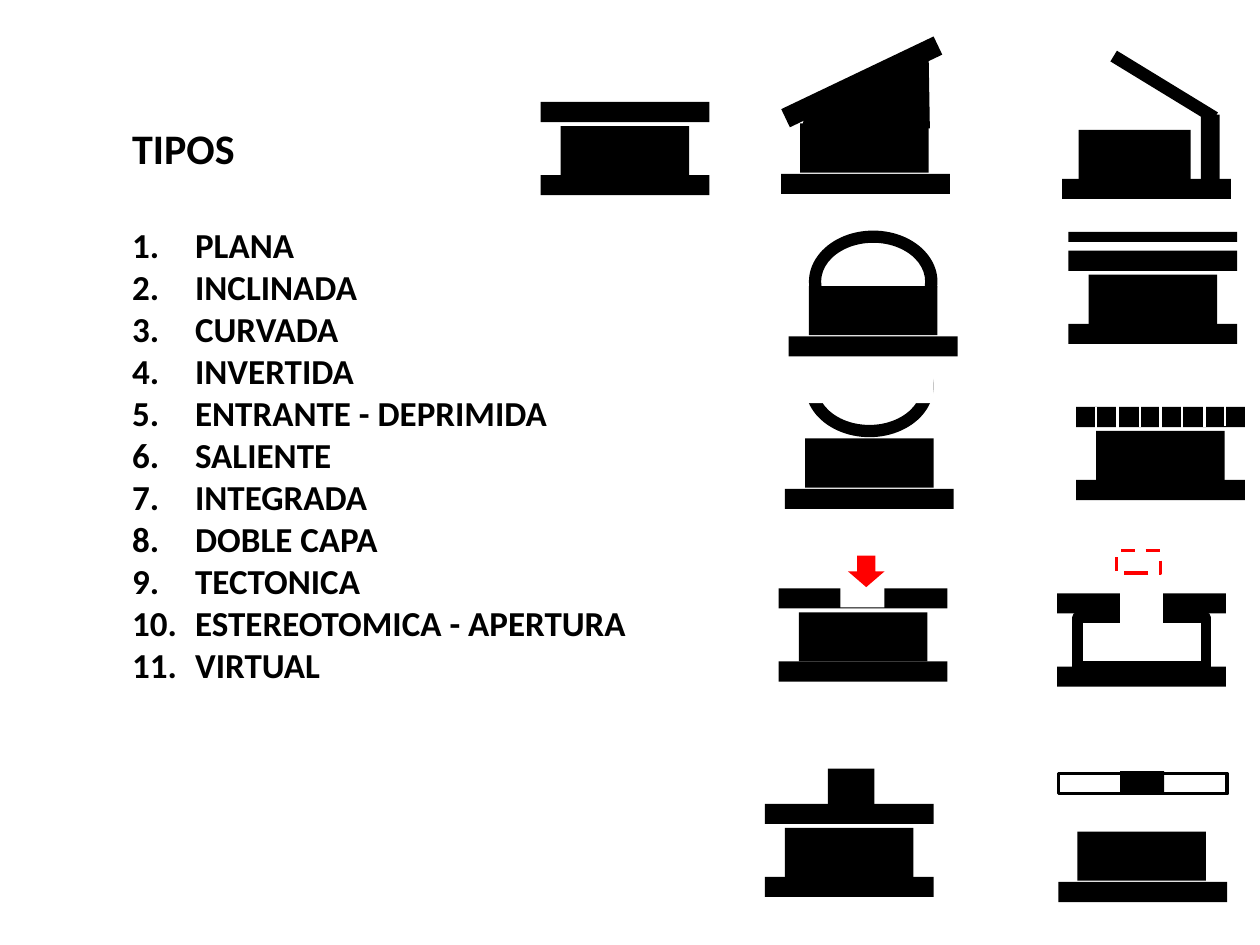
from dataclasses import dataclass
from typing import Optional

from lxml.etree import SubElement
from pptx import Presentation
from pptx.dml.color import RGBColor
from pptx.enum.dml import MSO_LINE
from pptx.enum.shapes import MSO_CONNECTOR, MSO_SHAPE as Preset
from pptx.oxml.ns import qn
from pptx.util import Pt

PX = 9144
BLACK, WHITE, RED = "000000", "FFFFFF", "FF0000"
TITLE = "TIPOS"
ROOF_TYPES = (
    "PLANA", "INCLINADA", "CURVADA", "INVERTIDA", "ENTRANTE - DEPRIMIDA",
    "SALIENTE", "INTEGRADA", "DOBLE CAPA", "TECTONICA",
    "ESTEREOTOMICA - APERTURA", "VIRTUAL",
)


@dataclass(frozen=True)
class Part:
    left: int
    top: int
    width: int
    height: int
    fill: str = BLACK
    preset: Preset = Preset.RECTANGLE
    outline: Optional[str] = None
    weight: float = 0
    dashed: bool = False
    rotation: float = 0
    adjustment: Optional[float] = None


@dataclass(frozen=True)
class Outline:
    points: tuple[tuple[int, int], ...]


@dataclass(frozen=True)
class Joint:
    left: int
    top: int
    height: int


def color(value: str) -> RGBColor:
    return RGBColor.from_string(value)


def body(left: int, top: int, **style) -> Part:
    return Part(left, top, 102, 39, **style)


def slab(left: int, top: int, **style) -> Part:
    return Part(left, top, 134, 16, **style)


def ring(left: int, top: int) -> Part:
    return Part(left, top, 102, 81, preset=Preset.DONUT, adjustment=0.12)


def house(left: int, top: int, **body_style) -> list:
    return [body(left + 16, top + 19, **body_style),
            slab(left, top), slab(left, top + 58)]


def joints() -> list:
    return [Joint(start + offset, 323 - index, 18)
            for start in (870, 921)
            for index, offset in enumerate((0, 17, 35, 51))]


INVERTED = [ring(639, 266), body(639, 348), slab(623, 388),
            Part(639, 266, 102, 54, WHITE)]
FLAT = house(429, 81)
SLOPED = [
    body(635, 98), slab(620, 138),
    Outline(((637, 99), (643, 99), (738, 102), (737, 42), (640, 85))),
    slab(617, 57, rotation=334.5),
]
CURVED = [ring(642, 183), body(642, 227), slab(626, 267)]
PROJECTING = house(607, 638) + [Part(657, 610, 37, 43)]
INTEGRATED = [
    Part(856, 103, 89, 45), Part(877, 64, 94, 10, rotation=31.4),
    slab(843, 142), Part(953, 91, 15, 51),
]
DOUBLE_LAYER = house(848, 199) + [Part(848, 184, 134, 8)]
TECTONIC = house(854, 323) + joints()
VIRTUAL = [
    body(855, 660), slab(840, 614, fill=WHITE, outline=BLACK, weight=2),
    slab(840, 700), Part(889, 612, 35, 18),
]
OPENING = house(839, 471, fill=WHITE, outline=BLACK, weight=6) + [
    Part(889, 469, 34, 40, WHITE),
    Part(886, 437, 35, 18, WHITE, outline=RED, weight=2, dashed=True),
]
RECESSED = house(618, 467) + [
    Part(667, 464, 35, 18, WHITE),
    Part(673, 441, 29, 25, RED, Preset.DOWN_ARROW),
]
OTHER_DRAWINGS = (FLAT, SLOPED, CURVED, PROJECTING, INTEGRATED, DOUBLE_LAYER,
                  TECTONIC, VIRTUAL, OPENING, RECESSED)


def paint(shape, fill: str) -> None:
    shape.shadow.inherit = False
    shape.fill.solid()
    shape.fill.fore_color.rgb = color(fill)
    shape.line.fill.background()


def draw_part(shapes, part: Part) -> None:
    shape = shapes.add_shape(part.preset, part.left * PX, part.top * PX,
                             part.width * PX, part.height * PX)
    paint(shape, part.fill)
    shape.rotation = part.rotation
    if part.adjustment is not None:
        shape.adjustments[0] = part.adjustment
    if part.outline:
        shape.line.color.rgb = color(part.outline)
        shape.line.width = Pt(part.weight)
    if part.dashed:
        shape.line.dash_style = MSO_LINE.DASH


def draw_outline(shapes, outline: Outline) -> None:
    first, *others = outline.points
    builder = shapes.build_freeform(*first, scale=PX)
    builder.add_line_segments(others, close=True)
    paint(builder.convert_to_shape(), BLACK)


def draw_joint(shapes, joint: Joint) -> None:
    connector = shapes.add_connector(
        MSO_CONNECTOR.STRAIGHT, joint.left * PX, joint.top * PX,
        joint.left * PX, (joint.top + joint.height) * PX)
    connector.line.color.rgb = color(WHITE)
    connector.line.width = Pt(1.25)
    SubElement(connector._element.spPr, qn("a:effectLst"))


PAINTERS = {Part: draw_part, Outline: draw_outline, Joint: draw_joint}


def draw_group(slide, elements: list) -> None:
    group = slide.shapes.add_group_shape()
    for element in elements:
        PAINTERS[type(element)](group.shapes, element)


def format_text(paragraph, size: int) -> None:
    values = {"name": "Calibri", "size": Pt(size), "bold": True}
    for run in paragraph.runs:
        for name, value in values.items():
            setattr(run.font, name, value)
        run.font.color.rgb = color(BLACK)


def number(paragraph) -> None:
    properties = paragraph._p.get_or_add_pPr()
    properties.set("marL", str(50 * PX))
    properties.set("indent", str(-50 * PX))
    SubElement(properties, qn("a:buFont"), typeface="+mj-lt")
    SubElement(properties, qn("a:buAutoNum"), type="arabicPeriod")


def draw_list(slide) -> None:
    box = slide.shapes.add_textbox(95 * PX, 92 * PX, 452 * PX, 461 * PX)
    frame = box.text_frame
    frame.word_wrap = True
    title = frame.paragraphs[0]
    title.text = TITLE
    format_text(title, 24)
    for index, roof_type in enumerate(ROOF_TYPES):
        paragraph = frame.add_paragraph()
        paragraph.text = roof_type
        number(paragraph)
        format_text(paragraph, 20)
        if index == 0:
            paragraph.space_before = Pt(29)


def main() -> None:
    presentation = Presentation()
    presentation.slide_width = 1000 * PX
    presentation.slide_height = 750 * PX
    slide = presentation.slides.add_slide(presentation.slide_layouts[6])
    draw_group(slide, INVERTED)
    draw_list(slide)
    for drawing in OTHER_DRAWINGS:
        draw_group(slide, drawing)
    presentation.save("out.pptx")


if __name__ == "__main__":
    main()
